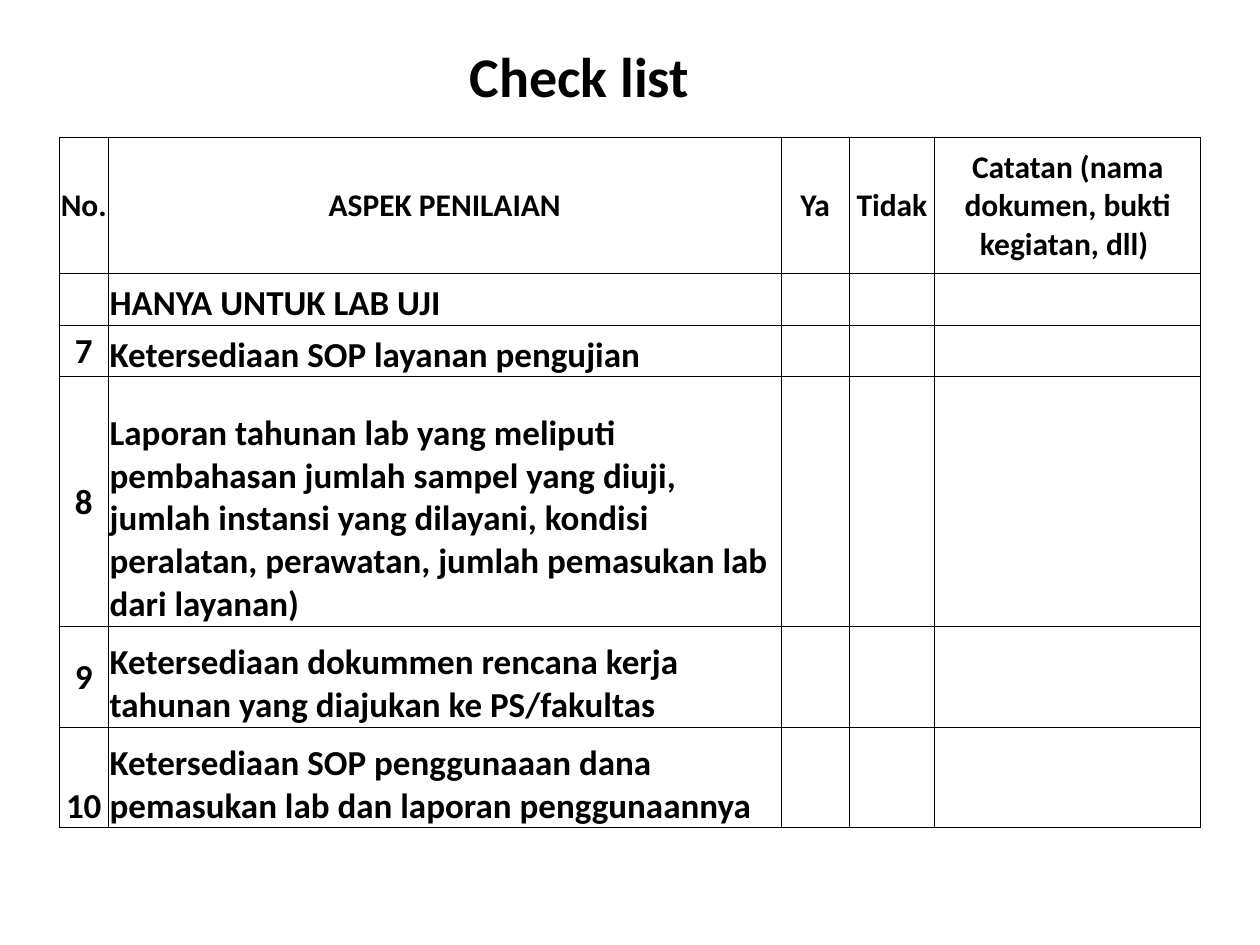
from lxml import etree
from pptx import Presentation
from pptx.dml.color import RGBColor
from pptx.enum.text import MSO_ANCHOR, PP_ALIGN
from pptx.oxml.ns import qn
from pptx.util import Inches, Pt

CENTER, LEFT = PP_ALIGN.CENTER, PP_ALIGN.LEFT
MIDDLE, BOTTOM = MSO_ANCHOR.MIDDLE, MSO_ANCHOR.BOTTOM
WIDTH, HEIGHT = 10, 7.5

HEADERS = ["No.", "ASPEK PENILAIAN", "Ya", "Tidak",
           "Catatan (nama dokumen, bukti kegiatan, dll) "]
ASPECTS = [
    ("", "HANYA UNTUK LAB UJI"),
    ("7", "Ketersediaan SOP layanan pengujian"),
    ("8", "Laporan tahunan lab yang meliputi pembahasan jumlah sampel yang diuji, "
          "jumlah instansi yang dilayani, kondisi peralatan, perawatan, "
          "jumlah pemasukan lab dari layanan)"),
    ("9", "Ketersediaan dokummen rencana kerja tahunan yang diajukan ke PS/fakultas"),
    ("10", "Ketersediaan SOP penggunaaan dana pemasukan lab dan laporan penggunaannya"),
]
COLUMN_WIDTHS = [0.39, 5.34, 0.54, 0.68, 2.11]
ROW_HEIGHTS = [1.08, 0.41, 0.41, 1.98, 0.8, 0.8]


def color(value):
    return RGBColor.from_string(value)


class ChecklistSlide:
    font_name = "Calibri"
    ink = "000000"
    paper = "FFFFFF"
    border_width = Pt(0.5)

    def __init__(self, presentation):
        self.slide = presentation.slides.add_slide(presentation.slide_layouts[5])

    def box(self, left, top, width, height):
        return (Inches(left * WIDTH), Inches(top * HEIGHT),
                Inches(width * WIDTH), Inches(height * HEIGHT))

    def set_text(self, text_frame, text, size, alignment):
        text_frame.text = text
        for paragraph in text_frame.paragraphs:
            paragraph.alignment = alignment
            paragraph.font.size = Pt(size)
            for run in paragraph.runs:
                run.font.name = self.font_name
                run.font.size = Pt(size)
                run.font.bold = True
                run.font.color.rgb = color(self.ink)

    def title(self, text, left, top, width, height):
        shape = self.slide.shapes.title
        shape.left, shape.top, shape.width, shape.height = self.box(left, top, width, height)
        shape.text_frame.vertical_anchor = MIDDLE
        self.set_text(shape.text_frame, text, 32, CENTER)

    def border(self, cell):
        properties = cell._tc.get_or_add_tcPr()
        for side in ("a:lnL", "a:lnR", "a:lnT", "a:lnB"):
            line = etree.SubElement(properties, qn(side), w=str(self.border_width))
            fill = etree.SubElement(line, qn("a:solidFill"))
            etree.SubElement(fill, qn("a:srgbClr"), val=self.ink)

    def cell(self, cell, text, size, alignment, anchor):
        cell.margin_left = cell.margin_right = cell.margin_top = Inches(0.01)
        cell.margin_bottom = 0
        cell.vertical_anchor = anchor
        self.border(cell)
        cell.fill.solid()
        cell.fill.fore_color.rgb = color(self.paper)
        self.set_text(cell.text_frame, text, size, alignment)

    def table(self, left, top):
        size = sum(COLUMN_WIDTHS) / WIDTH, sum(ROW_HEIGHTS) / HEIGHT
        table = self.slide.shapes.add_table(
            len(ROW_HEIGHTS), len(COLUMN_WIDTHS), *self.box(left, top, *size)).table
        table.first_row = table.horz_banding = False
        for column, width in zip(table.columns, COLUMN_WIDTHS):
            column.width = Inches(width)
        for row, height in zip(table.rows, ROW_HEIGHTS):
            row.height = Inches(height)
        for index, header in enumerate(HEADERS):
            self.cell(table.cell(0, index), header, 18, CENTER, MIDDLE)
        for row, (number, aspect) in enumerate(ASPECTS, 1):
            number_anchor = BOTTOM if row == len(ASPECTS) else MIDDLE
            self.cell(table.cell(row, 0), number, 20, CENTER, number_anchor)
            self.cell(table.cell(row, 1), aspect, 20, LEFT, BOTTOM)
            for column in range(2, len(HEADERS)):
                self.cell(table.cell(row, column), "", 18, LEFT, MIDDLE)


def main():
    presentation = Presentation()
    presentation.slide_width, presentation.slide_height = Inches(WIDTH), Inches(HEIGHT)
    checklist = ChecklistSlide(presentation)
    checklist.title("Check list", 0.05, 0.16 / HEIGHT, 0.82, 0.87 / HEIGHT)
    checklist.table(0.47 / WIDTH, 1.09 / HEIGHT)
    presentation.save("out.pptx")


if __name__ == "__main__":
    main()
